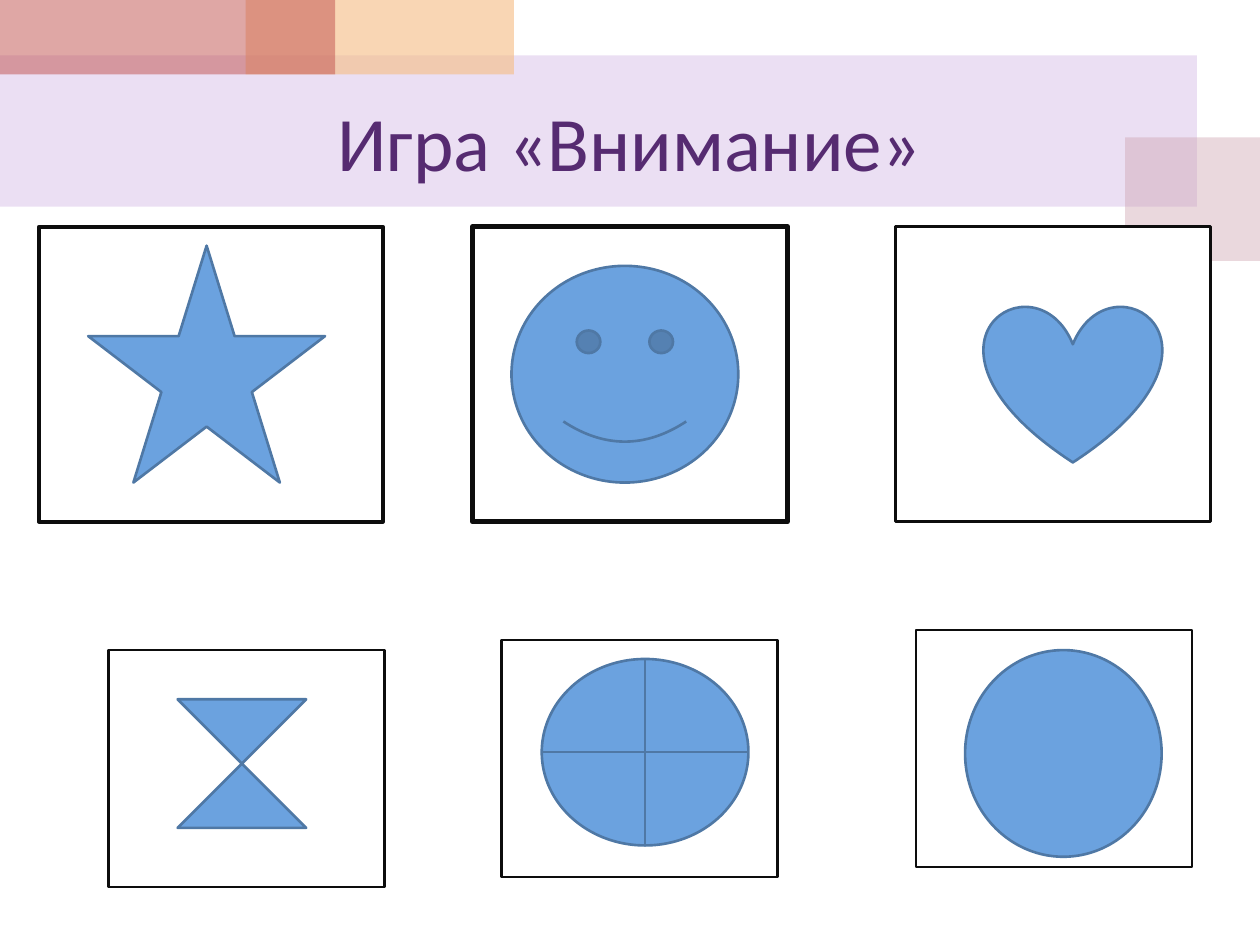
import pptx
import pptx.util
import pptx.dml.color
import pptx.enum.shapes
import pptx.enum.text
import pptx.oxml
import pptx.oxml.ns
from lxml import etree

Inches = pptx.util.Inches
Pt = pptx.util.Pt
SHAPE = pptx.enum.shapes.MSO_SHAPE

COLORS = {
    "lilac": "BF98D8",
    "rose": "CC9EAC",
    "peach": "F5BC83",
    "red": "C0504D",
    "title": "562B71",
    "card": "FFFFFF",
    "frame": "0D0D0D",
    "figure": "6BA2DF",
    "outline": "4F78A5",
}


def color(name):
    return pptx.dml.color.RGBColor.from_string(COLORS[name])


def add_figure(page, kind, box, fill, line=None, width=1.5):
    """Place a preset shape in box (left, top, width, height)."""
    shape = page.shapes.add_shape(kind, *map(Inches, box))
    shape.shadow.inherit = False
    shape.fill.solid()
    shape.fill.fore_color.rgb = color(fill)
    if line:
        shape.line.color.rgb = color(line)
        shape.line.width = Pt(width)
    else:
        shape.line.fill.background()
    return shape


def add_band(page, box, fill, opacity):
    """Place a translucent rectangle; opacity is in percent."""
    band = add_figure(page, SHAPE.RECTANGLE, box, fill)
    tone = band.element.spPr.find(".//" + pptx.oxml.ns.qn("a:srgbClr"))
    etree.SubElement(tone, pptx.oxml.ns.qn("a:alpha"), val=str(opacity * 1000))


def add_header(page, box):
    """Place the coloured bands and the title over them."""
    left, top, width, height = box
    bands = [
        ((0, 0.44, 9.5, 1.2), "lilac", 30),
        ((8.93, 1.09, 1.07, 0.98), "rose", 40),
        ((1.95, 0, 2.13, 0.59), "peach", 60),
        ((0, 0, 2.66, 0.59), "red", 50),
    ]
    for (x, y, w, h), fill, opacity in bands:
        add_band(page, (left + x, top + y, w, h), fill, opacity)

    title = page.shapes.title
    title.left, title.top = Inches(left + 0.5), Inches(top + 0.59)
    title.width, title.height = Inches(width - 1), Inches(height - 1.02)
    title.text_frame.text = "Игра «Внимание»"
    title.text_frame.vertical_anchor = pptx.enum.text.MSO_ANCHOR.MIDDLE
    para = title.text_frame.paragraphs[0]
    para.alignment = pptx.enum.text.PP_ALIGN.CENTER
    span = para.runs[0]
    span.font.size = Pt(44)
    span.font.name = "Calibri"
    span.font.color.rgb = color("title")
    # Bring the title in front of the bands
    title.element.getparent().append(title.element)


def add_card(page, box, border, kind, inset):
    """Place a framed card; inset is the figure's box within the card."""
    left, top = box[:2]
    x, y, width, height = inset
    add_figure(page, SHAPE.RECTANGLE, box, "card", "frame", border)
    add_figure(page, kind, (left + x, top + y, width, height), "figure", "outline")


def main():
    deck = pptx.Presentation()
    deck.slide_width, deck.slide_height = Inches(10), Inches(7.5)
    page = deck.slides.add_slide(deck.slide_layouts[5])

    add_header(page, (0, 0, 10, 2.07))

    # Upper row: card box, border, figure, figure box within the card
    add_card(page, (0.31, 1.8, 2.73, 2.34), 2.25,
             SHAPE.STAR_5_POINT, (0.39, 0.15, 1.88, 1.88))
    add_card(page, (3.75, 1.8, 2.5, 2.34), 3,
             SHAPE.SMILEY_FACE, (0.31, 0.31, 1.8, 1.72))
    add_card(page, (7.11, 1.8, 2.5, 2.34), 1.5,
             SHAPE.HEART, (0.7, 0.62, 1.41, 1.25))

    # Lower row: equal cards, each a little higher than the one before
    lower_row = [
        (0.86, SHAPE.FLOWCHART_COLLATE, (0.55, 0.39, 1.02, 1.02)),
        (3.98, SHAPE.FLOWCHART_OR, (0.32, 0.15, 1.64, 1.48)),
        (7.27, SHAPE.FLOWCHART_CONNECTOR, (0.39, 0.16, 1.56, 1.64)),
    ]
    for step, (left, kind, inset) in enumerate(lower_row):
        add_card(page, (left, 5.16 - 0.08 * step, 2.19, 1.88), 1.5, kind, inset)

    deck.save("out.pptx")


if __name__ == "__main__":
    main()
